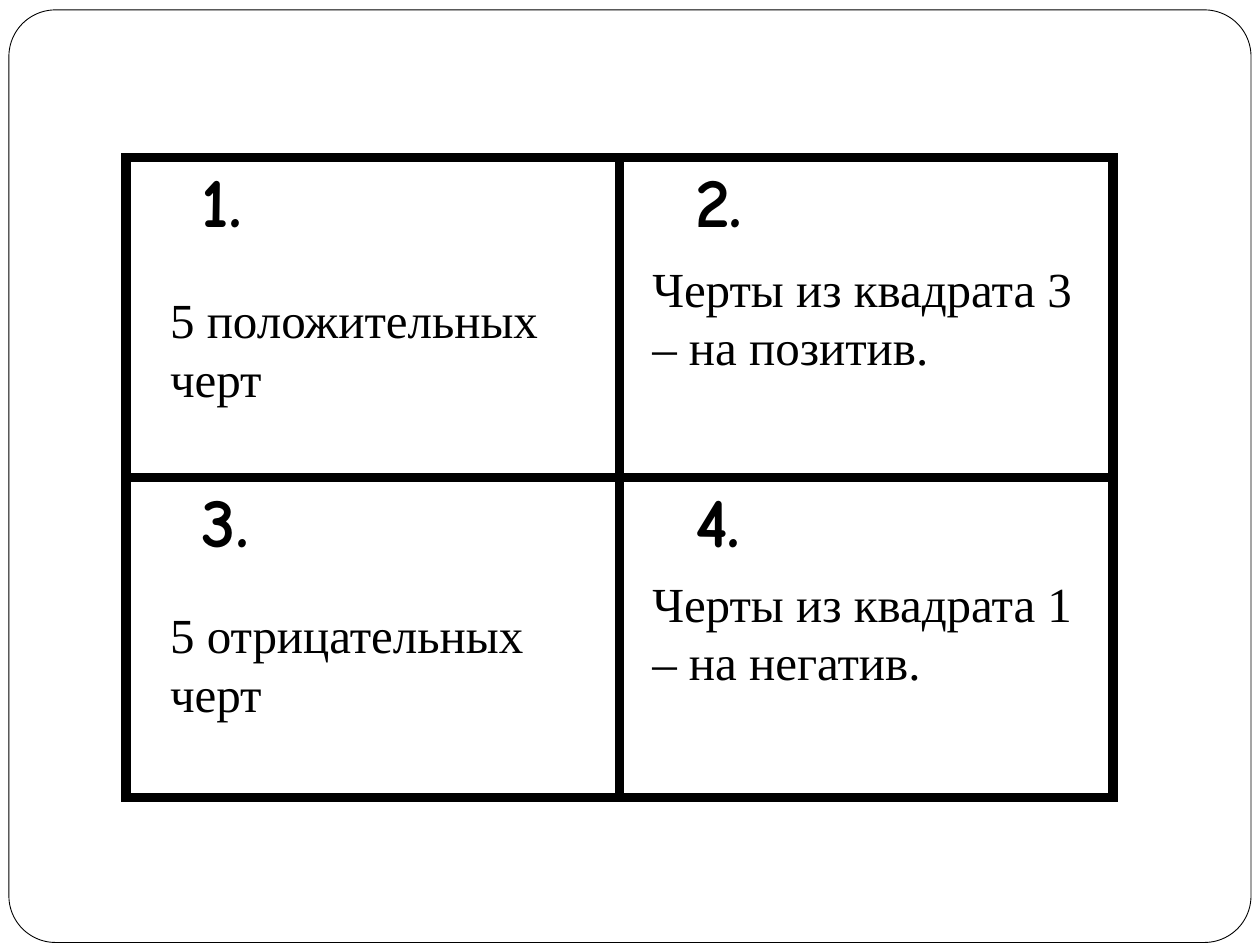
import pptx
import pptx.util
import pptx.dml.color
import pptx.enum.shapes
import pptx.enum.text
import lxml.etree

Cm = pptx.util.Cm
Pt = pptx.util.Pt
BLACK, WHITE = "000000", "FFFFFF"
MARKS = [["1.", "2."], ["3.", "4."]]
NOTES = [
    ["5 положительных черт", "Черты из квадрата 3 – на позитив."],
    ["5 отрицательных черт", "Черты из квадрата 1 – на негатив."],
]
LEFT, TOP, WIDE, HIGH = 2.54, 3.18, 9.95, 6.45
NOTE_X, NOTE_Y = [3.18, 12.9], [5.72, 5.08]
NOTE_H = [2.64, 3.84]
NOTE_W, STEP = 9.1, 6.35


def tint(item, code):
    item.rgb = pptx.dml.color.RGBColor.from_string(code)


def paint(item, code):
    item.fill.solid()
    tint(item.fill.fore_color, code)


def write(para, text, face, size, bold=False):
    run = para.add_run()
    run.text = text
    run.font.name = face
    run.font.size = Pt(size)
    run.font.bold = bold
    tint(run.font.color, BLACK)


def edge(cell, code, size):
    props = cell._tc.get_or_add_tcPr()
    space = props.nsmap["a"]
    for spot, side in enumerate(("lnL", "lnR", "lnT", "lnB")):
        line = lxml.etree.Element(f"{{{space}}}{side}", w=str(Pt(size)))
        fill = lxml.etree.SubElement(line, f"{{{space}}}solidFill")
        lxml.etree.SubElement(fill, f"{{{space}}}srgbClr", val=code)
        props.insert(spot, line)


def add_frame(slide):
    kind = pptx.enum.shapes.MSO_SHAPE.ROUNDED_RECTANGLE
    frame = slide.shapes.add_shape(kind, Cm(0.18), Cm(0.2), Cm(25.04), Cm(18.8))
    frame.adjustments[0] = 0.05
    frame.shadow.inherit = False
    paint(frame, WHITE)
    tint(frame.line.color, BLACK)
    frame.line.width = Pt(0.5)


def add_grid(slide):
    rows, cols = len(MARKS), len(MARKS[0])
    grid = slide.shapes.add_table(
        rows, cols, Cm(LEFT), Cm(TOP), Cm(cols * WIDE), Cm(rows * HIGH)
    ).table
    for r, row in enumerate(MARKS):
        for c, mark in enumerate(row):
            cell = grid.cell(r, c)
            paint(cell, WHITE)
            edge(cell, BLACK, 6)
            para = cell.text_frame.paragraphs[0]
            para.level = 1
            para._p.get_or_add_pPr().set("marL", str(Cm(1.27)))
            write(para, mark, "Comic Neue", 40, True)


def add_note(slide, r, c):
    box = slide.shapes.add_textbox(
        Cm(NOTE_X[c]), Cm(NOTE_Y[c] + r * STEP), Cm(NOTE_W), Cm(NOTE_H[c])
    )
    frame = box.text_frame
    frame.word_wrap = True
    frame.auto_size = pptx.enum.text.MSO_AUTO_SIZE.SHAPE_TO_FIT_TEXT
    write(frame.paragraphs[0], NOTES[r][c], "Times New Roman", 28)


def main():
    deck = pptx.Presentation()
    deck.slide_width, deck.slide_height = Cm(25.4), Cm(19.05)
    slide = deck.slides.add_slide(deck.slide_layouts[6])
    add_frame(slide)
    add_grid(slide)
    for c in range(2):
        for r in range(2):
            add_note(slide, r, c)
    deck.save("out.pptx")


if __name__ == "__main__":
    main()
